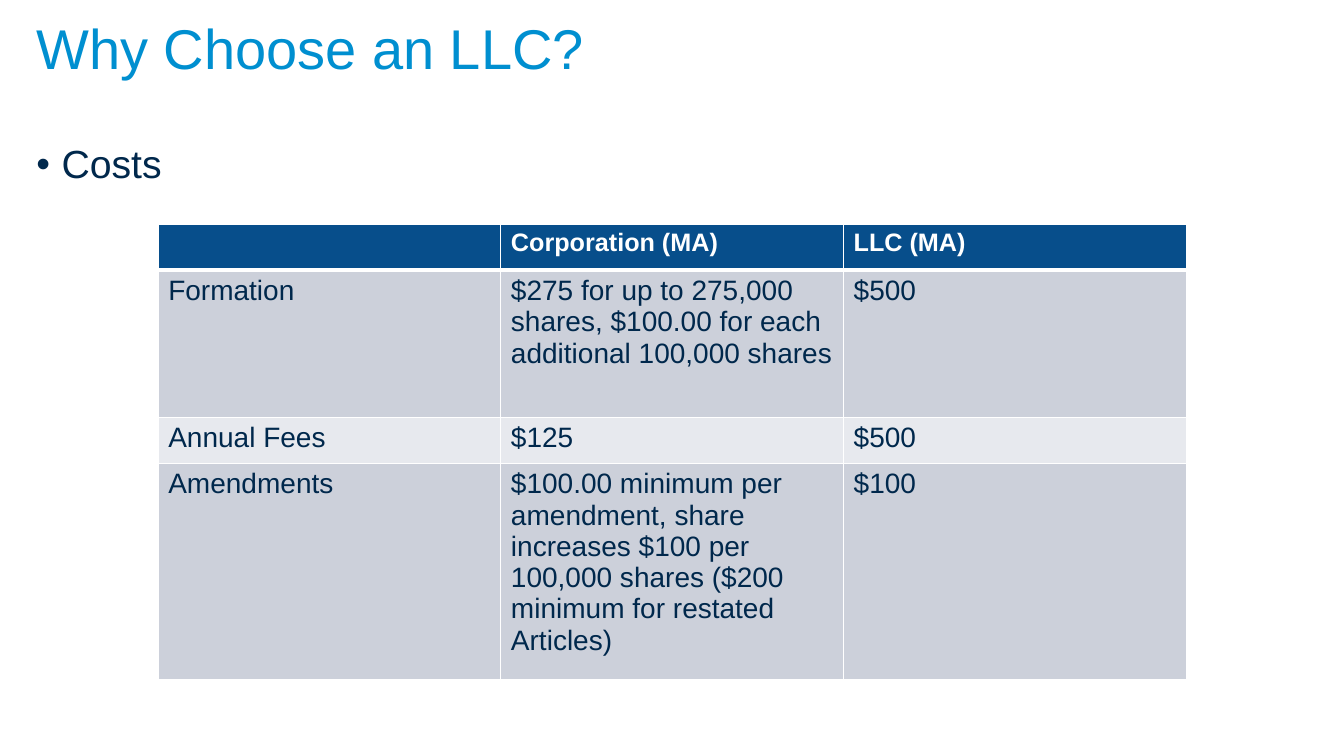
"""Build the slide comparing corporation and LLC costs."""
import lxml.etree
import pptx
import pptx.dml.color
import pptx.enum.text
import pptx.oxml.ns
import pptx.util

Pt = pptx.util.Pt
RGBColor = pptx.dml.color.RGBColor

FONT = "Arial"
NAVY = RGBColor(0x00, 0x28, 0x4C)
SKY = RGBColor(0x00, 0x8F, 0xD0)
HEADER_BLUE = RGBColor(0x07, 0x4E, 0x8B)
BAND_DARK = RGBColor(0xCC, 0xD0, 0xDA)
BAND_LIGHT = RGBColor(0xE7, 0xE9, 0xEE)
WHITE = RGBColor(0xFF, 0xFF, 0xFF)

COSTS = [
    ["", "Corporation (MA)", "LLC (MA)"],
    ["Formation", "$275 for up to 275,000 shares, $100.00 for each additional 100,000 shares", "$500"],
    ["Annual Fees", "$125", "$500"],
    ["Amendments", "$100.00 minimum per amendment, share increases $100 per 100,000 shares "
     "($200 minimum for restated Articles)", "$100"],
]


def write(frame, text, *, size, color=NAVY, bold=False, line_spacing=1.0, bullet_indent=None):
    paragraph = frame.paragraphs[0]
    paragraph.alignment = pptx.enum.text.PP_ALIGN.LEFT
    paragraph.line_spacing = line_spacing
    paragraph.space_before = Pt(0)
    if bullet_indent:
        properties = paragraph._p.get_or_add_pPr()
        properties.set("marL", str(Pt(bullet_indent)))
        properties.set("indent", str(-Pt(bullet_indent)))
        bullet = lxml.etree.SubElement(properties, pptx.oxml.ns.qn("a:buChar"))
        bullet.set("char", "•")
    if text:
        paragraph.add_run().text = text
    font = paragraph.font
    font.name, font.size, font.bold = FONT, Pt(size), bold
    font.color.rgb = color
    for run in paragraph.runs:
        run.font.name, run.font.size, run.font.bold = FONT, Pt(size), bold
        run.font.color.rgb = color


class SlideBuilder:
    def __init__(self, presentation):
        self.slide = presentation.slides.add_slide(presentation.slide_layouts[1])

    def placeholder(self, index, text, box, anchor, **text_format):
        shape = self.slide.placeholders[index]
        shape.left, shape.top, shape.width, shape.height = map(Pt, box)
        frame = shape.text_frame
        frame.word_wrap = True
        frame.auto_size = pptx.enum.text.MSO_AUTO_SIZE.NONE
        frame.vertical_anchor = anchor
        write(frame, text, line_spacing=0.9, **text_format)

    def border(self, cell, side, width):
        line = lxml.etree.SubElement(cell._tc.get_or_add_tcPr(), pptx.oxml.ns.qn(f"a:ln{side}"))
        line.set("w", str(Pt(width)))
        fill = lxml.etree.SubElement(line, pptx.oxml.ns.qn("a:solidFill"))
        lxml.etree.SubElement(fill, pptx.oxml.ns.qn("a:srgbClr")).set("val", str(WHITE))

    def table(self, rows, box, row_heights):
        frame = self.slide.shapes.add_table(len(rows), len(rows[0]), *map(Pt, box))
        table = frame.table
        for row, height in zip(table.rows, row_heights):
            row.height = Pt(height)
        for row_index, texts in enumerate(rows):
            header = row_index == 0
            fill = HEADER_BLUE if header else BAND_DARK if row_index % 2 else BAND_LIGHT
            for column_index, text in enumerate(texts):
                cell = table.cell(row_index, column_index)
                for side in "LRTB":
                    thick = (header and side == "B") or (row_index == 1 and side == "T")
                    self.border(cell, side, 3 if thick else 1)
                cell.fill.solid()
                cell.fill.fore_color.rgb = fill
                write(cell.text_frame, text, size=18 if header else 20,
                      color=WHITE if header else NAVY, bold=header)


def main():
    presentation = pptx.Presentation()
    presentation.slide_width, presentation.slide_height = Pt(960), Pt(540)
    builder = SlideBuilder(presentation)
    anchors = pptx.enum.text.MSO_ANCHOR
    builder.placeholder(0, "Why Choose an LLC?", (18.75, 0, 818, 73.5), anchors.MIDDLE,
                        size=40, color=SKY)
    builder.placeholder(1, "Costs", (18.75, 100, 828, 393), anchors.TOP,
                        size=28, bullet_indent=18)
    builder.table(COSTS, (113, 160, 734.4, 325.4), (33, 105.1, 33, 154.3))
    presentation.save("out.pptx")


if __name__ == "__main__":
    main()
